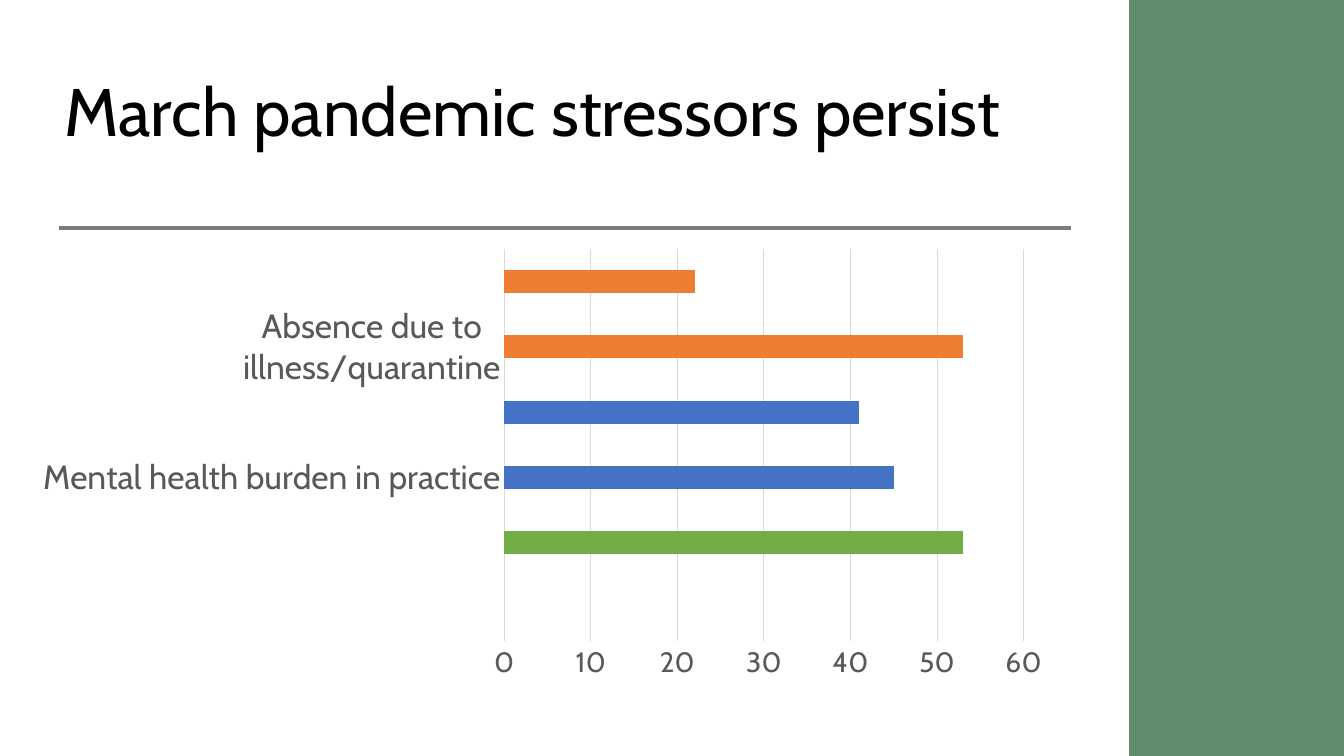
"""Build the slide on pandemic stressors that persist from March."""
from lxml import etree
from pptx import Presentation
from pptx.chart.data import CategoryChartData
from pptx.dml.color import RGBColor
from pptx.enum import chart as charts, shapes, text
from pptx.oxml import ns
from pptx.util import Inches, Pt

STRESSORS = [
    ("", None),
    ("", 53),
    ("Mental health burden in practice", 45),
    ("", 41),
    ("Absence due to illness/quarantine", 53),
    ("", 22),
]
HIGHLIGHTS = {1: "70AD47", 4: "ED7D31", 5: "ED7D31"}


def color(value):
    """Turn a hex string into a colour."""
    return RGBColor.from_string(value)


def apply(target, **values):
    """Set attributes from a dict of format values."""
    for key, value in values.items():
        setattr(target, key, value)


class SlideBuilder:
    """Hold the style and the current slide."""

    font = "Cabin"
    grid = "D9D9D9"
    label = "595959"

    def __init__(self, slide):
        """Keep the slide to draw on."""
        self.slide = slide

    def style_font(self, font, size, hex_color):
        """Give a font the deck's face, a size and a colour."""
        apply(font, name=self.font, size=Pt(size), bold=False)
        font.color.rgb = color(hex_color)

    def style_line(self, line, hex_color, width):
        """Give a line its colour and width."""
        line.color.rgb = color(hex_color)
        line.width = Pt(width)

    def panel(self, left, top, width, height, fill, outline=None):
        """Draw a filled rectangle."""
        panel = self.slide.shapes.add_shape(
            shapes.MSO_SHAPE.RECTANGLE, *map(Inches, (left, top, width, height)))
        panel.shadow.inherit = False
        panel.fill.solid()
        panel.fill.fore_color.rgb = color(fill)
        if outline:
            self.style_line(panel.line, outline, 1)
        else:
            panel.line.fill.background()

    def rule(self, left, right, y, hex_color, width):
        """Draw a horizontal line."""
        rule = self.slide.shapes.add_connector(
            shapes.MSO_CONNECTOR.STRAIGHT, *map(Inches, (left, y, right, y)))
        self.style_line(rule.line, hex_color, width)
        etree.SubElement(rule._element.spPr, ns.qn("a:effectLst"))

    def title(self, left, top, width, height, wording):
        """Write the heading."""
        frame = self.slide.shapes.add_textbox(
            *map(Inches, (left, top, width, height))).text_frame
        apply(frame, word_wrap=True, vertical_anchor=text.MSO_ANCHOR.MIDDLE)
        heading = frame.paragraphs[0]
        apply(heading, text=wording, line_spacing=0.9)
        self.style_font(heading.font, 48, "000000")

    def axis(self, axis, size, has_grid):
        """Style one chart axis."""
        apply(axis, has_major_gridlines=has_grid,
              major_tick_mark=charts.XL_TICK_MARK.NONE,
              minor_tick_mark=charts.XL_TICK_MARK.NONE)
        self.style_font(axis.tick_labels.font, size, self.label)
        if has_grid:
            axis.format.line.fill.background()
            self.style_line(axis.major_gridlines.format.line, self.grid, 0.75)
        else:
            self.style_line(axis.format.line, self.grid, 0.75)

    def bars(self, left, top, width, height, rows, fill, highlights):
        """Draw a bar chart with some bars in their own colour."""
        labels, values = zip(*rows)
        data = CategoryChartData()
        data.categories = labels
        data.add_series("Series 1", values)
        chart = self.slide.shapes.add_chart(
            charts.XL_CHART_TYPE.BAR_CLUSTERED,
            *map(Inches, (left, top, width, height)), data).chart
        apply(chart, has_legend=False, has_title=False)
        self.style_font(chart.font, 10, "000000")
        plot = chart.plots[0]
        apply(plot, gap_width=182, vary_by_categories=False)
        series = plot.series[0]
        series.invert_if_negative = False
        fills = [(series, fill)]
        fills += [(series.points[i], tint) for i, tint in highlights.items()]
        for part, tint in fills:
            part.format.fill.solid()
            part.format.fill.fore_color.rgb = color(tint)
        self.axis(chart.category_axis, 24, False)
        self.axis(chart.value_axis, 20, True)
        apply(chart.value_axis, minimum_scale=0, maximum_scale=60, major_unit=10)


def main():
    """Build and save the slide."""
    deck = Presentation()
    apply(deck, slide_width=Inches(13.33), slide_height=Inches(7.5))
    builder = SlideBuilder(deck.slides.add_slide(deck.slide_layouts[6]))
    builder.panel(10.67, 0, 2.66, 7.5, "608D6C")
    builder.rule(0.59, 10.67, 2.26, "7C7C7C", 2.5)
    builder.panel(10.63, 0, 0.56, 7.5, "FFFFFF", "FFFFFF")
    builder.title(0.54, 0.41, 9.99, 1.45, "March pandemic stressors persist")
    builder.bars(0.22, 2.38, 10.32, 4.45, STRESSORS, "4472C4", HIGHLIGHTS)
    deck.save("out.pptx")


if __name__ == "__main__":
    main()
